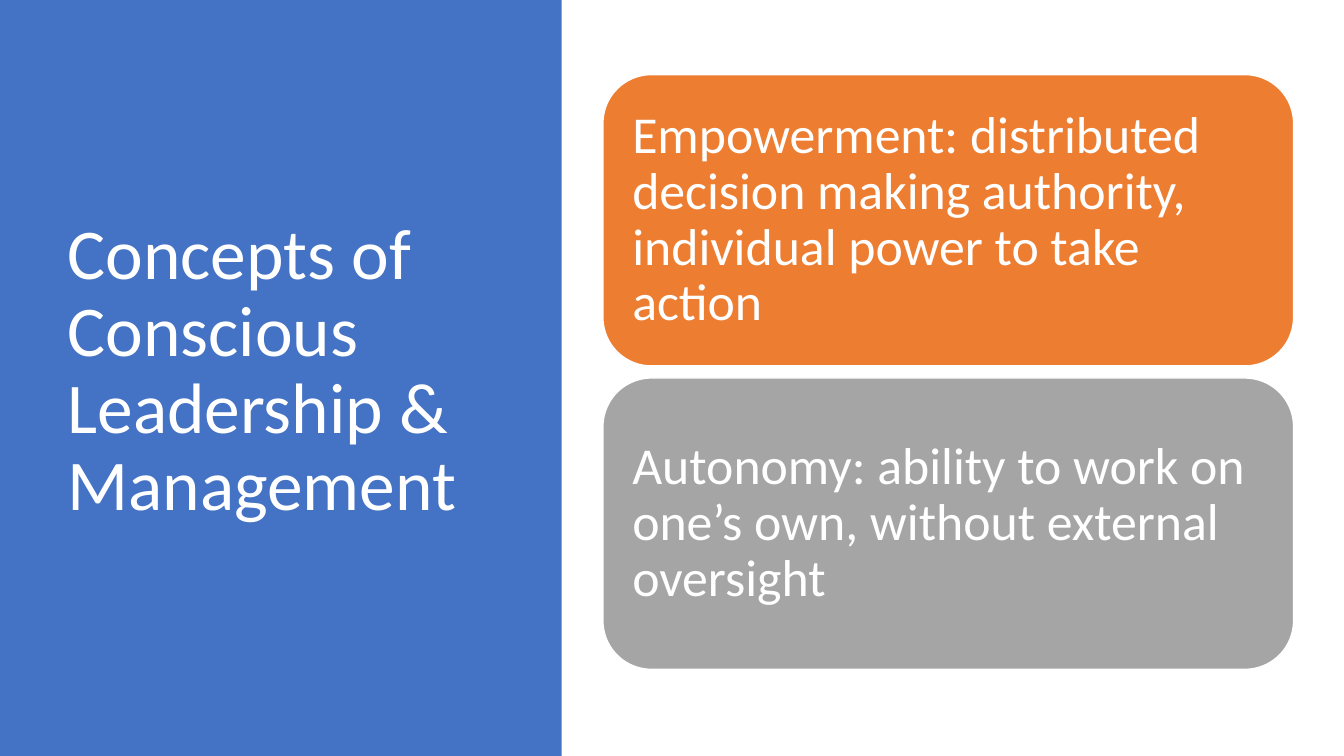
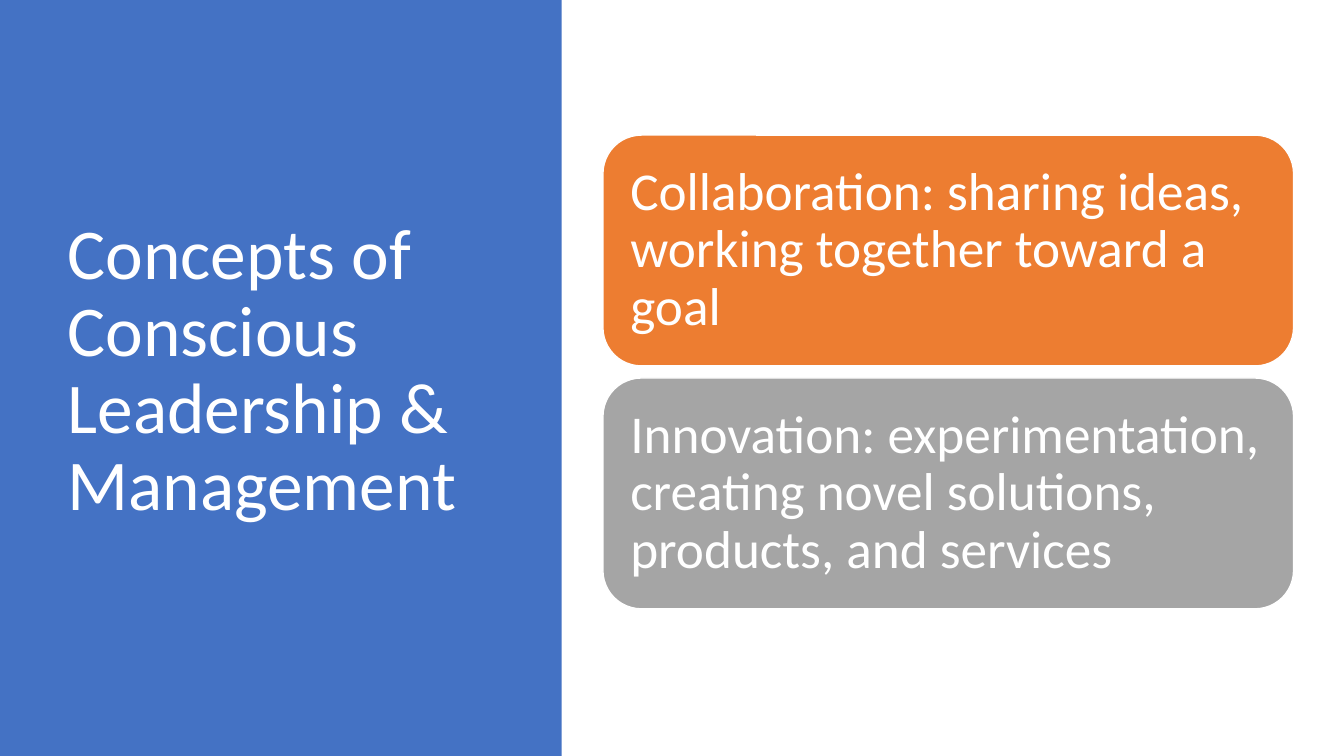
"""Build two slides on concepts of conscious leadership and management."""
from dataclasses import dataclass

from pptx import Presentation
from pptx.dml.color import RGBColor as RGB
from pptx.enum.shapes import MSO_SHAPE as SHAPE
from pptx.enum.text import MSO_ANCHOR as ANCHOR, MSO_AUTO_SIZE as AUTO, PP_ALIGN as ALIGN
from pptx.util import Inches, Pt


@dataclass(frozen=True)
class Theme:
    font: str = "Calibri"
    white: RGB = RGB(0xFF, 0xFF, 0xFF)
    panel: RGB = RGB(0x44, 0x72, 0xC4)
    cards: tuple = (RGB(0xED, 0x7D, 0x31), RGB(0xA5, 0xA5, 0xA5))
    title_size: int = 51


T = Theme()
TITLE_LINES = ("Concepts of Conscious Leadership &", "Management")
CARD_LEFT, CARD_WIDTH, CARD_GAP, CARDS_MIDDLE = 5.98, 6.85, 0.12, 3.69
SLIDES = [
    (2.89, 37, 0.15, (
        "Empowerment: distributed decision making authority, individual power to take action",
        "Autonomy: ability to work on one’s own, without external oversight",
    )),
    (2.29, 38, 0.16, (
        "Collaboration: sharing ideas, working together toward a goal",
        "Innovation: experimentation, creating novel solutions, products, and services",
    )),
]


def add_box(s, shape, left, top, width, height, color):
    sp = s.shapes.add_shape(shape, Inches(left), Inches(top), Inches(width), Inches(height))
    sp.shadow.inherit = False
    sp.fill.solid()
    sp.fill.fore_color.rgb = color
    sp.line.fill.background()
    return sp


def write(tf, lines, size):
    tf.word_wrap = True
    tf.auto_size = AUTO.NONE
    tf.vertical_anchor = ANCHOR.MIDDLE
    p = tf.paragraphs[0]
    p.alignment = ALIGN.LEFT
    p.line_spacing = 0.9
    for i, line in enumerate(lines):
        if i:
            p.add_line_break()
        r = p.add_run()
        r.text = line
        r.font.name = T.font
        r.font.size = Pt(size)
        r.font.color.rgb = T.white


prs = Presentation()
prs.slide_width, prs.slide_height = Inches(13.33), Inches(7.5)

for height, size, inset, texts in SLIDES:
    s = prs.slides.add_slide(prs.slide_layouts[5])
    panel = add_box(s, SHAPE.RECTANGLE, 0, 0, 5.57, 7.5, T.panel)
    title = s.shapes.title
    title._element.addprevious(panel._element)
    title.left, title.top = Inches(0.57), Inches(0.68)
    title.width, title.height = Inches(4.16), Inches(6.02)
    write(title.text_frame, TITLE_LINES, T.title_size)

    first_top = CARDS_MIDDLE - CARD_GAP / 2 - height
    for i, (text, color) in enumerate(zip(texts, T.cards)):
        top = first_top + i * (height + CARD_GAP)
        sp = add_box(s, SHAPE.ROUNDED_RECTANGLE, CARD_LEFT, top, CARD_WIDTH, height, color)
        sp.line.color.rgb = T.white
        sp.line.width = Pt(1)
        tf = sp.text_frame
        tf.margin_left = tf.margin_right = tf.margin_top = tf.margin_bottom = Inches(inset)
        write(tf, [text], size)

prs.save("out.pptx")
